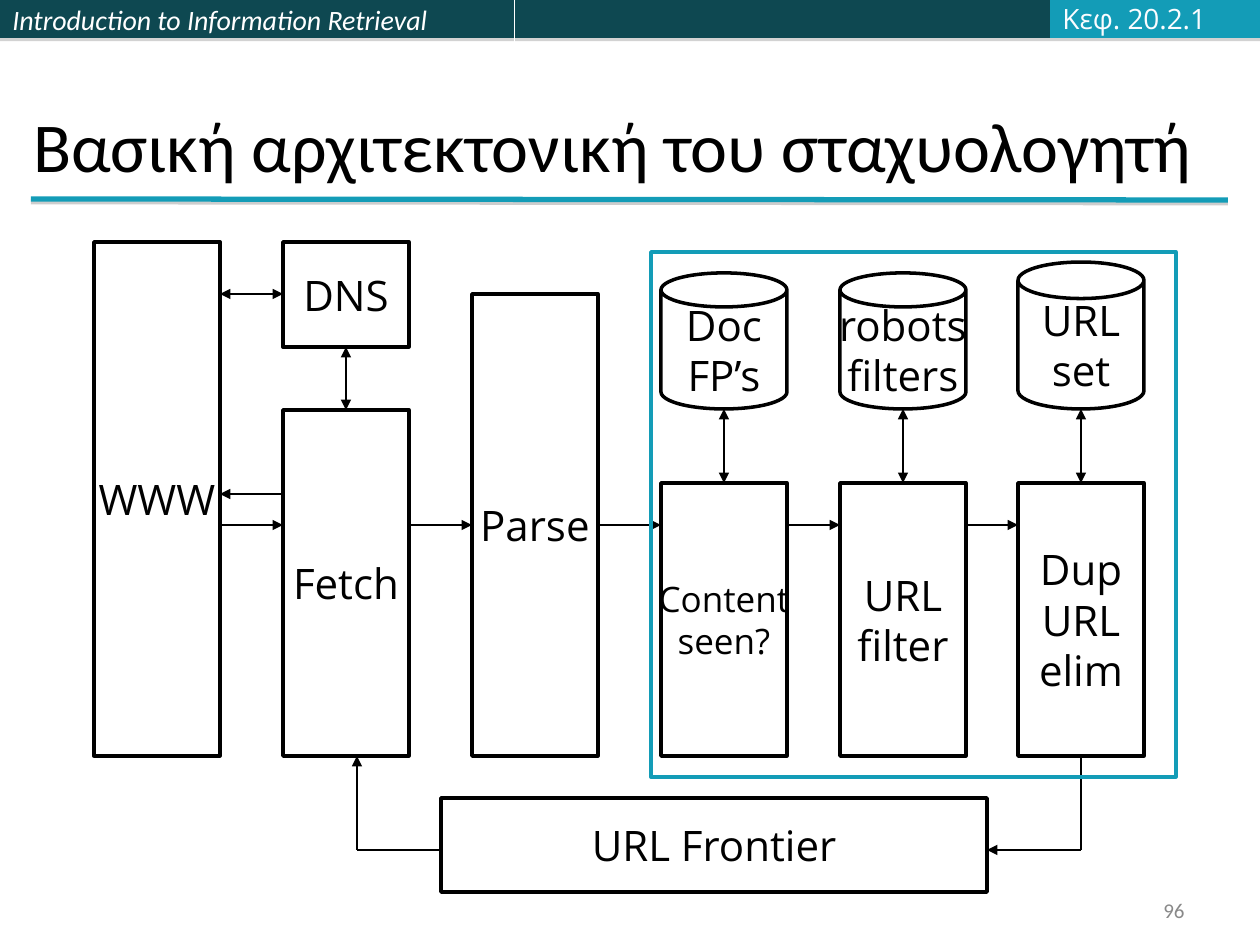
from lxml import etree
from pptx import Presentation
from pptx.dml.color import RGBColor
from pptx.enum.shapes import MSO_CONNECTOR, MSO_SHAPE
from pptx.enum.text import MSO_ANCHOR, PP_ALIGN
from pptx.oxml.ns import qn
from pptx.util import Pt

PX = 914400 / 126
RECT, CAN = MSO_SHAPE.RECTANGLE, MSO_SHAPE.CAN
STRAIGHT = MSO_CONNECTOR.STRAIGHT
MIDDLE, BOTTOM = MSO_ANCHOR.MIDDLE, MSO_ANCHOR.BOTTOM
LEFT, CENTER, RIGHT = PP_ALIGN.LEFT, PP_ALIGN.CENTER, PP_ALIGN.RIGHT
COLORS = {
    "dark": "0E4851",
    "teal": "139CB7",
    "black": "000000",
    "white": "FFFFFF",
    "chapter": "FBFCFF",
    "number": "898989",
    "shadow": "808080",
}


def px(value):
    return round(value * PX)


def color(name):
    return RGBColor.from_string(COLORS[name])


def inside(box, left, top, width, height):
    """Turn a place relative to the box into a place on the page."""
    return box[0] + left, box[1] + top, width, height


def write(shape, text, size=24, font="Open Sans", ink="black", align=CENTER,
          anchor=MIDDLE, italic=False, wrap=False):
    frame = shape.text_frame
    frame.word_wrap = wrap
    frame.vertical_anchor = anchor
    for index, line in enumerate(text.split("\n")):
        para = frame.add_paragraph() if index else frame.paragraphs[0]
        para.alignment = align
        span = para.add_run()
        span.text = line
        span.font.size = Pt(size)
        span.font.name = font
        span.font.italic = italic
        span.font.color.rgb = color(ink)


def add_text(page, box, text, **style):
    write(page.shapes.add_textbox(*map(px, box)), text, **style)


def add_block(page, box, kind=RECT, fill=None, outline=None):
    shape = page.shapes.add_shape(kind, *map(px, box))
    shape.shadow.inherit = False
    if fill:
        shape.fill.solid()
        shape.fill.fore_color.rgb = color(fill)
    else:
        shape.fill.background()
    if outline:
        shape.line.color.rgb = color(outline)
        shape.line.width = Pt(2)
    else:
        shape.line.fill.background()
    return shape


def add_line(page, box, start, end, ink="black", width=0.75, head=False, tail=False):
    """Join two points of the box; head is the arrow at start, tail at end."""
    points = [px(box[axis] + point[axis]) for point in (start, end) for axis in (0, 1)]
    line = page.shapes.add_connector(STRAIGHT, *points)
    line.line.color.rgb = color(ink)
    line.line.width = Pt(width)
    for tag, shown in (("a:headEnd", head), ("a:tailEnd", tail)):
        if shown:
            etree.SubElement(line.line._get_or_add_ln(), qn(tag), type="triangle")
    etree.SubElement(line._element.spPr, qn("a:effectLst"))
    return line


def cast_shadow(shape, distance, opacity):
    effects = shape._element.spPr.find(qn("a:effectLst"))
    shadow = etree.SubElement(effects, qn("a:outerShdw"), blurRad="0",
                              dist=str(Pt(distance)), dir="5400000", rotWithShape="0")
    tint = etree.SubElement(shadow, qn("a:srgbClr"), val=COLORS["shadow"])
    etree.SubElement(tint, qn("a:alpha"), val=str(opacity * 1000))


def draw_header(page, box):
    bars = []
    for left, right, fill in ((0, 514, "dark"), (515, 1050, "dark"), (1050, 1260, "teal")):
        bar = add_block(page, inside(box, left, 0, right - left, box[3]), fill=fill)
        cast_shadow(bar, 1.8, 35)
        bars.append(bar)
    write(bars[0], "Introduction to Information Retrieval", size=16, font="Calibri",
          ink="white", align=LEFT, italic=True)
    add_text(page, inside(box, 1050, -5, 183, 47), "Κεφ. 20.2.1", size=16,
             ink="chapter", align=LEFT)


def draw_title(page, box):
    add_text(page, box, "Βασική αρχιτεκτονική του σταχυολογητή", size=40,
             font="Calibri", align=LEFT, anchor=BOTTOM, wrap=True)
    rule = add_line(page, box, (10, 199), (1207, 200), ink="teal", width=3)
    cast_shadow(rule, 1.6, 38)


def draw_crawler(page, box):
    side = 126
    www, fetch, parse, content, url_filter, dup = 0, 189, 378, 567, 746, 924
    flow, bottom = 283, 514
    stages = (
        ("WWW", www, 0, bottom, 24),
        ("DNS", fetch, 0, 105, 24),
        ("Fetch", fetch, 168, bottom, 24),
        ("Parse", parse, 52, bottom, 24),
        ("Content\nseen?", content, 241, bottom, 20),
        ("URL\nfilter", url_filter, 241, bottom, 24),
        ("Dup\nURL\nelim", dup, 241, bottom, 24),
    )
    for text, left, top, end, size in stages:
        block = add_block(page, inside(box, left, top, side, end - top), outline="black")
        write(block, text, size=size)

    stores = (
        ("Doc\nFP’s", content, 31, 0.27),
        ("robots\nfilters", url_filter, 31, 0.27),
        ("URL\nset", dup, 20, 0.29),
    )
    for text, left, top, rim in stores:
        can = add_block(page, inside(box, left, top, side, 167 - top), CAN, outline="black")
        can.adjustments[0] = rim
        write(can, text)
        middle = left + side // 2
        add_line(page, box, (middle, 167), (middle, 241), head=True, tail=True)

    columns = (www, fetch, parse, content, url_filter, dup)
    for left, following in zip(columns, columns[1:]):
        add_line(page, box, (left + side, flow), (following, flow), tail=True)
    add_line(page, box, (fetch, 252), (side, 252), tail=True)
    add_line(page, box, (fetch, 52), (side, 52), head=True, tail=True)
    add_line(page, box, (252, 105), (252, 168), head=True, tail=True)

    frontier = add_block(page, inside(box, 347, 556, 546, 94), outline="black")
    write(frontier, "URL Frontier")
    add_line(page, box, (987, bottom), (987, 608))
    add_line(page, box, (987, 608), (893, 608), tail=True)
    add_line(page, box, (347, 608), (263, 608))
    add_line(page, box, (263, 608), (263, bottom), tail=True)
    add_block(page, inside(box, 557, 10, 525, 525), outline="teal")


def main():
    deck = Presentation()
    deck.slide_width, deck.slide_height = px(1260), px(945)
    page = deck.slides.add_slide(deck.slide_layouts[6])
    draw_header(page, (0, 0, 1260, 38))
    draw_title(page, (21, 0, 1218, 193))
    draw_crawler(page, (94, 242, 1082, 650))
    add_text(page, (903, 893, 294, 34), "96", size=12, font="Calibri", ink="number",
             align=RIGHT, wrap=True)
    deck.save("out.pptx")


if __name__ == "__main__":
    main()
